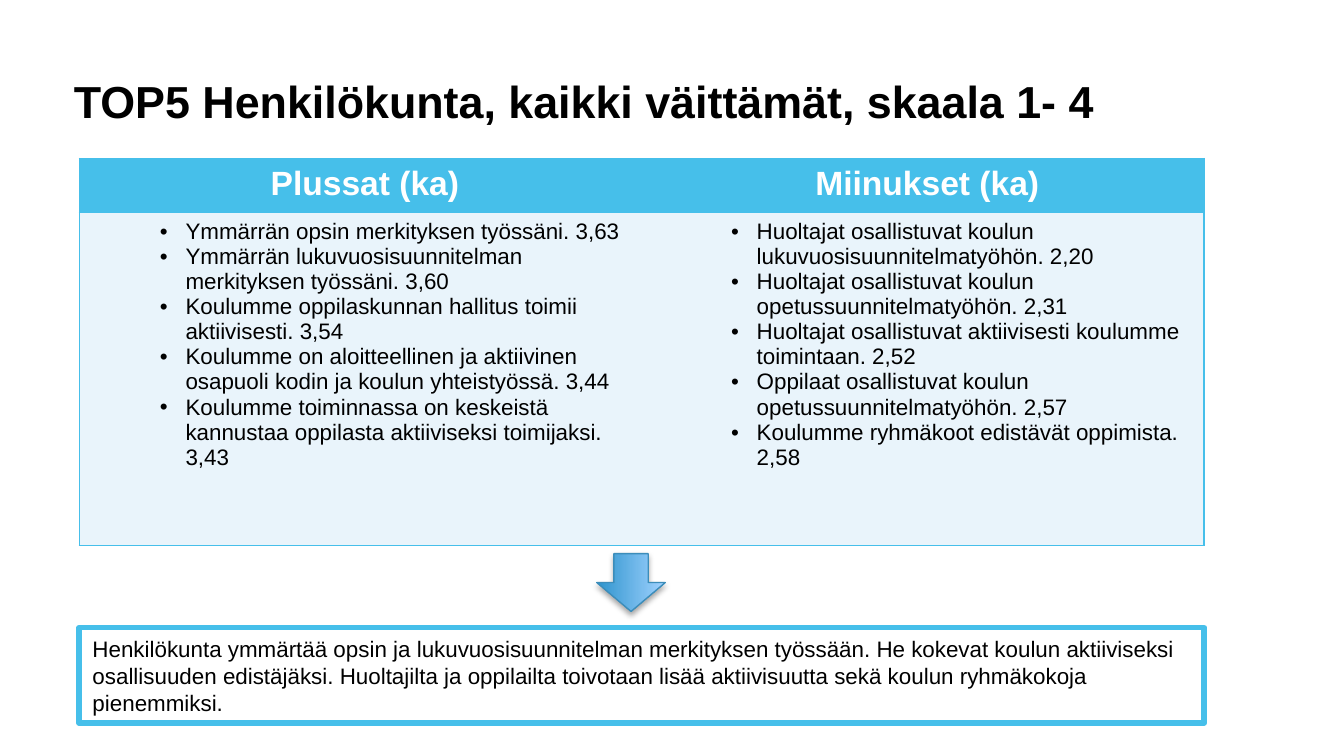
from lxml import etree
from pptx import Presentation
from pptx.dml.color import RGBColor
from pptx.enum.shapes import MSO_SHAPE as Shape
from pptx.enum.text import MSO_ANCHOR as Anchor, PP_ALIGN as Align
from pptx.oxml import parse_xml
from pptx.oxml.ns import nsdecls, qn
from pptx.util import Inches, Pt

COLORS = {"accent": "46BFEA", "pale": "E9F4FB", "black": "000000", "white": "FFFFFF",
          "arrow_dark": "2E94CD", "arrow_light": "A1D2FF", "arrow_line": "3C8DBA"}
LEFT, WIDTH = 0.59, 8.37

TITLE = "TOP5 Henkilökunta, kaikki väittämät, skaala 1- 4"
COLUMNS = [
    ("Plussat (ka)", 4.25, [
        "Ymmärrän opsin merkityksen työssäni. 3,63",
        "Ymmärrän lukuvuosisuunnitelman merkityksen työssäni. 3,60",
        "Koulumme oppilaskunnan hallitus toimii aktiivisesti. 3,54",
        "Koulumme on aloitteellinen ja aktiivinen osapuoli kodin ja koulun yhteistyössä. 3,44",
        "Koulumme toiminnassa on keskeistä kannustaa oppilasta aktiiviseksi toimijaksi. 3,43",
    ]),
    ("Miinukset (ka)", 4.12, [
        "Huoltajat osallistuvat koulun lukuvuosisuunnitelmatyöhön. 2,20",
        "Huoltajat osallistuvat koulun opetussuunnitelmatyöhön. 2,31",
        "Huoltajat osallistuvat aktiivisesti koulumme toimintaan. 2,52",
        "Oppilaat osallistuvat koulun opetussuunnitelmatyöhön. 2,57",
        "Koulumme ryhmäkoot edistävät oppimista. 2,58",
    ]),
]
SUMMARY = ("Henkilökunta ymmärtää opsin ja lukuvuosisuunnitelman merkityksen työssään. "
           "He kokevat koulun aktiiviseksi osallisuuden edistäjäksi. Huoltajilta ja oppilailta "
           "toivotaan lisää aktiivisuutta sekä koulun ryhmäkokoja pienemmiksi.")


def rgb(name):
    return RGBColor.from_string(COLORS[name])


def write(paragraph, text, size, color="black", bold=False):
    run = paragraph.add_run()
    run.text = text
    font_format = {"name": "Arial", "size": Pt(size), "bold": bold}
    for attribute, value in font_format.items():
        setattr(run.font, attribute, value)
    run.font.color.rgb = rgb(color)


def add_bullet(paragraph):
    paragraph.level = 1
    properties = paragraph._p.get_or_add_pPr()
    properties.set("marL", str(Inches(0.69)))
    properties.set("indent", str(Inches(-0.19)))
    etree.SubElement(properties, qn("a:buFont")).set("typeface", "Arial")
    etree.SubElement(properties, qn("a:buChar")).set("char", "•")


def style_cell(cell, fill, sides):
    """Fill the cell and draw borders on the given sides only."""
    cell.fill.solid()
    cell.fill.fore_color.rgb = rgb(fill)
    properties = cell._tc.get_or_add_tcPr()
    for position, side in enumerate("LRTB"):
        paint = (f'<a:solidFill><a:srgbClr val="{COLORS["accent"]}"/></a:solidFill>'
                 if side in sides else "<a:noFill/>")
        properties.insert(position, parse_xml(
            f'<a:ln{side} {nsdecls("a")} w="{Pt(1)}">{paint}</a:ln{side}>'))


def add_title(slide):
    frame = slide.shapes.add_textbox(
        Inches(0.55), Inches(0.18), Inches(8.14), Inches(0.77)).text_frame
    frame_format = {"word_wrap": True, "vertical_anchor": Anchor.BOTTOM, "margin_left": 0,
                    "margin_top": 0, "margin_right": Inches(0.1), "margin_bottom": 0}
    for attribute, value in frame_format.items():
        setattr(frame, attribute, value)
    frame.paragraphs[0].line_spacing = Pt(33)
    write(frame.paragraphs[0], TITLE, 24, bold=True)


def add_comparison(slide):
    table = slide.shapes.add_table(
        2, len(COLUMNS), Inches(LEFT), Inches(1.18), Inches(WIDTH), Inches(2.85)).table
    for row, height in zip(table.rows, (0.37, 2.48)):
        row.height = Inches(height)
    for index, (heading, width, statements) in enumerate(COLUMNS):
        table.columns[index].width = Inches(width)
        sides = "LTB" if index == 0 else "RTB"
        header, body = table.cell(0, index), table.cell(1, index)
        style_cell(header, "accent", sides)
        style_cell(body, "pale", sides)
        heading_line = header.text_frame.paragraphs[0]
        heading_line.alignment = Align.CENTER
        write(heading_line, heading, 18, "white", bold=True)
        frame = body.text_frame
        for number, statement in enumerate(statements):
            line = frame.add_paragraph() if number else frame.paragraphs[0]
            add_bullet(line)
            write(line, statement, 12)


def add_summary(slide):
    box = slide.shapes.add_shape(
        Shape.RECTANGLE, Inches(LEFT), Inches(4.67), Inches(WIDTH), Inches(0.71))
    box.shadow.inherit = False
    box.fill.solid()
    box.fill.fore_color.rgb = rgb("white")
    box.line.color.rgb = rgb("accent")
    box.line.width = Pt(3)
    box.text_frame.word_wrap = True
    paragraph = box.text_frame.paragraphs[0]
    paragraph.alignment = Align.LEFT
    write(paragraph, SUMMARY, 12)


def add_down_arrow(slide):
    arrow = slide.shapes.add_shape(
        Shape.RIGHT_ARROW, Inches(4.48), Inches(4.08), Inches(0.43), Inches(0.51))
    arrow.rotation = 90
    arrow.fill.gradient()
    arrow.fill.gradient_angle = 90
    for stop, color in zip(arrow.fill.gradient_stops, ("arrow_dark", "arrow_light")):
        stop.color.rgb = rgb(color)
    arrow.line.color.rgb = rgb("arrow_line")
    arrow.line.width = Pt(0.75)
    arrow.shadow.inherit = False
    effects = arrow._element.spPr.find(qn("a:effectLst"))
    effects.append(parse_xml(
        f'<a:outerShdw {nsdecls("a")} blurRad="{Pt(3.1)}" dist="{Pt(1.8)}" dir="5400000" '
        f'rotWithShape="0"><a:srgbClr val="{COLORS["black"]}"><a:alpha val="35000"/>'
        '</a:srgbClr></a:outerShdw>'))


def main():
    deck = Presentation()
    deck.slide_width = Inches(10)
    deck.slide_height = deck.slide_width * 9 // 16
    slide = deck.slides.add_slide(deck.slide_layouts[6])
    add_title(slide)
    add_comparison(slide)
    add_summary(slide)
    add_down_arrow(slide)
    deck.save("out.pptx")


if __name__ == "__main__":
    main()
